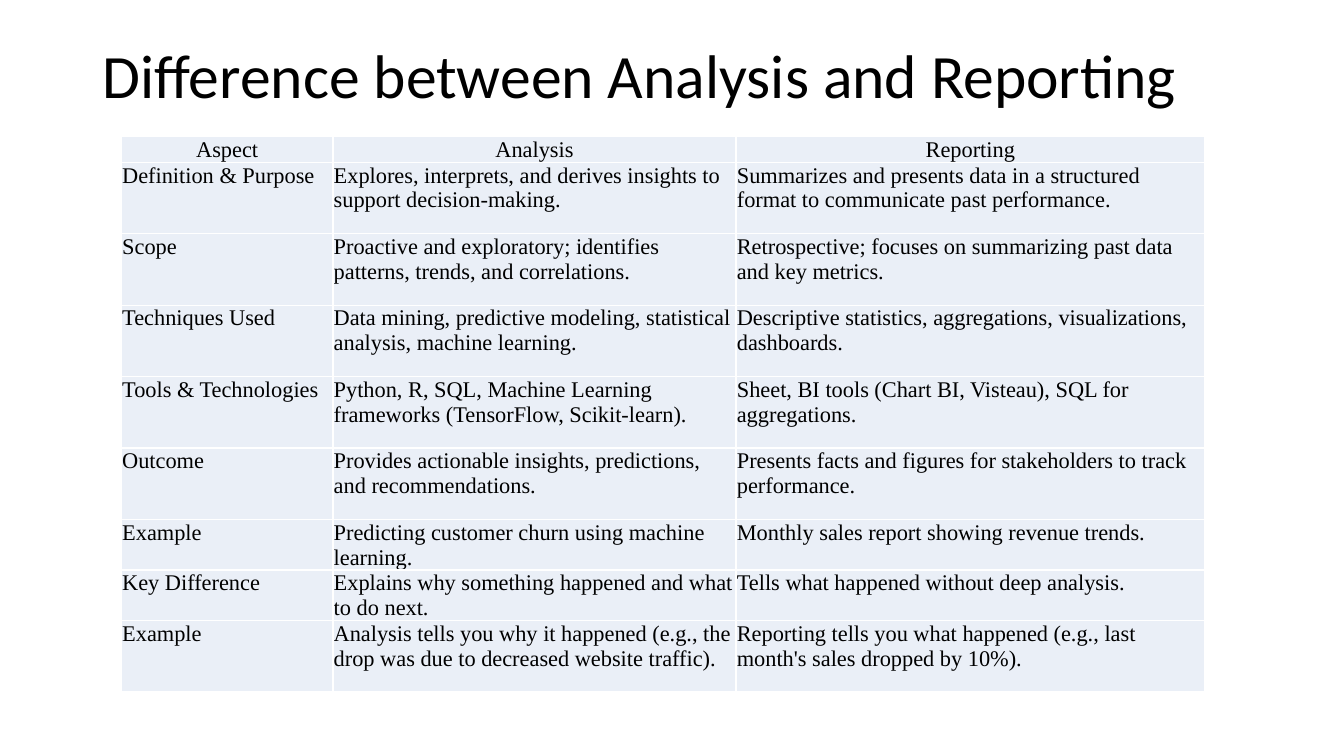
from pptx import Presentation, util as u
from pptx.dml.color import RGBColor
from pptx.enum import text

BLACK = RGBColor(0x00, 0x00, 0x00)
PALE_BLUE = RGBColor(0xEA, 0xEF, 0xF7)

COLUMN_WIDTHS = (5.33, 10.16, 11.81)
HEADER_HEIGHT, SHORT_ROW, TALL_ROW = 0.61, 1.19, 1.8
SHORT_ASPECTS = (6, 7)

COMPARISON = (
    ("Aspect", "Analysis", "Reporting"),
    ("Definition & Purpose",
     "Explores, interprets, and derives insights to support decision-making.",
     "Summarizes and presents data in a structured format to communicate past performance."),
    ("Scope",
     "Proactive and exploratory; identifies patterns, trends, and correlations.",
     "Retrospective; focuses on summarizing past data and key metrics."),
    ("Techniques Used",
     "Data mining, predictive modeling, statistical analysis, machine learning.",
     "Descriptive statistics, aggregations, visualizations, dashboards."),
    ("Tools & Technologies",
     "Python, R, SQL, Machine Learning frameworks (TensorFlow, Scikit-learn).",
     "Sheet, BI tools (Chart BI, Visteau), SQL for aggregations."),
    ("Outcome",
     "Provides actionable insights, predictions, and recommendations.",
     "Presents facts and figures for stakeholders to track performance."),
    ("Example",
     "Predicting customer churn using machine learning.",
     "Monthly sales report showing revenue trends."),
    ("Key Difference",
     "Explains why something happened and what to do next.",
     "Tells what happened without deep analysis."),
    ("Example",
     "Analysis tells you why it happened (e.g., the drop was due to decreased website traffic).",
     "Reporting tells you what happened (e.g., last month's sales dropped by 10%)."),
)


def style_paragraph(para, font_name, size, alignment):
    para.alignment = alignment
    para.font.name = font_name
    para.font.size = u.Pt(size)
    para.font.color.rgb = BLACK


def place_title(page, wording, left, top, width, height):
    title = page.shapes.title
    title.left, title.top = u.Cm(left), u.Cm(top)
    title.width, title.height = u.Cm(width), u.Cm(height)
    frame = title.text_frame
    frame.text = wording
    frame.word_wrap = True
    frame.auto_size = text.MSO_AUTO_SIZE.NONE
    frame.vertical_anchor = text.MSO_ANCHOR.TOP
    para = frame.paragraphs[0]
    para.line_spacing = 0.9
    style_paragraph(para, "Calibri", 44, text.PP_ALIGN.LEFT)


def fill_cell(cell, wording, alignment):
    cell.text = wording
    cell.fill.solid()
    cell.fill.fore_color.rgb = PALE_BLUE
    cell.margin_left = cell.margin_right = cell.margin_top = u.Cm(0.02)
    cell.margin_bottom = 0
    style_paragraph(cell.text_frame.paragraphs[0], "Times New Roman", 16, alignment)


def row_height(index):
    if index == 0:
        return HEADER_HEIGHT
    return SHORT_ROW if index in SHORT_ASPECTS else TALL_ROW


def place_comparison(page, rows, left, top):
    heights = [row_height(index) for index in range(len(rows))]
    frame = page.shapes.add_table(
        len(rows), len(COLUMN_WIDTHS), u.Cm(left), u.Cm(top),
        u.Cm(sum(COLUMN_WIDTHS)), u.Cm(sum(heights)))
    table = frame.table
    table.first_row = table.horz_banding = False
    for column, width in zip(table.columns, COLUMN_WIDTHS):
        column.width = u.Cm(width)
    for index, (row, height, wordings) in enumerate(zip(table.rows, heights, rows)):
        row.height = u.Cm(height)
        alignment = text.PP_ALIGN.LEFT if index else text.PP_ALIGN.CENTER
        for cell, wording in zip(row.cells, wordings):
            fill_cell(cell, wording, alignment)


def main():
    deck = Presentation()
    deck.slide_width, deck.slide_height = u.Cm(33.87), u.Cm(19.05)
    page = deck.slides.add_slide(deck.slide_layouts.get_by_name("Title Only"))
    place_title(page, "Difference between Analysis and Reporting", 2.33, 1.01, 29.21, 3.68)
    place_comparison(page, COMPARISON, 3.06, 3.44)
    deck.save("out.pptx")


if __name__ == "__main__":
    main()
